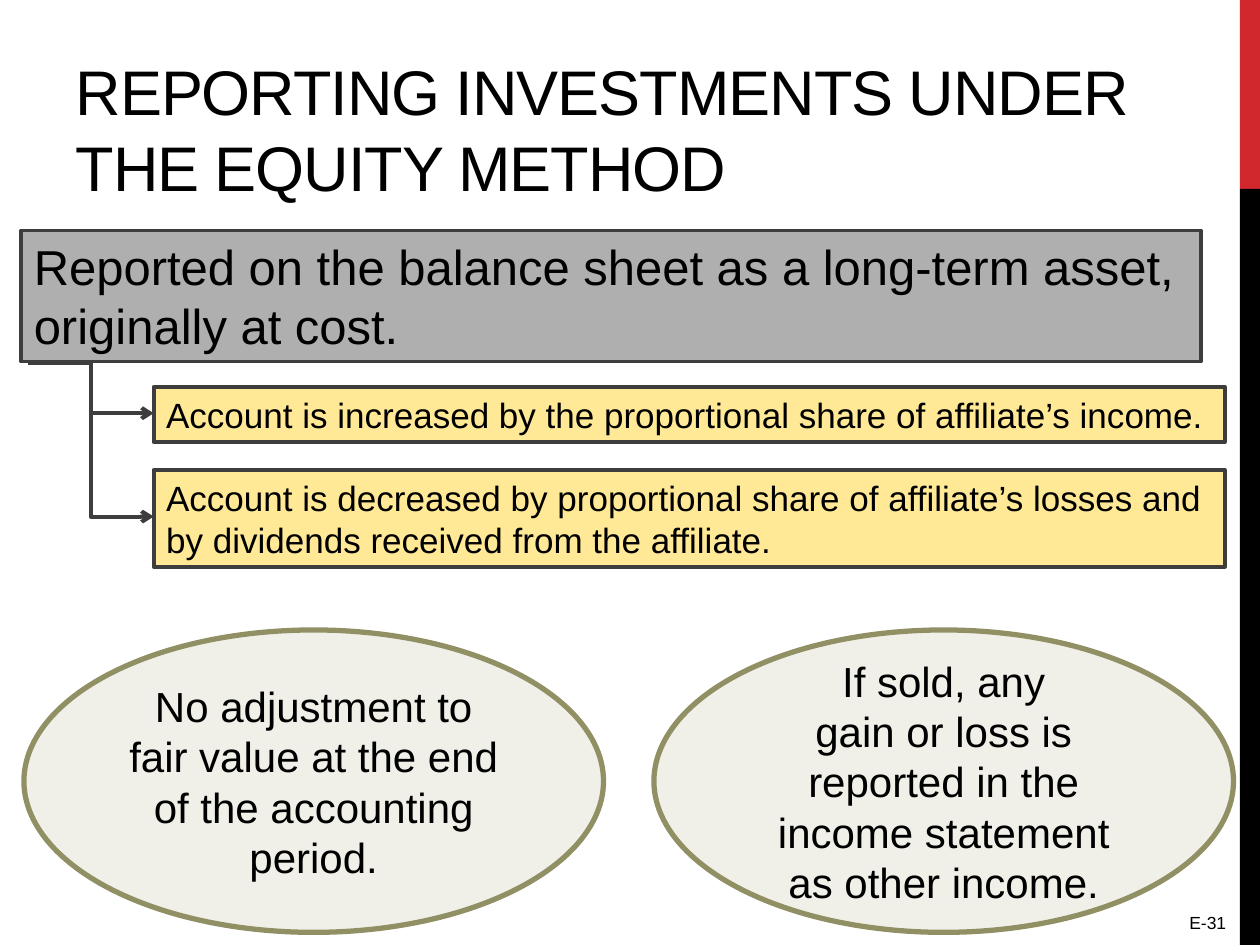
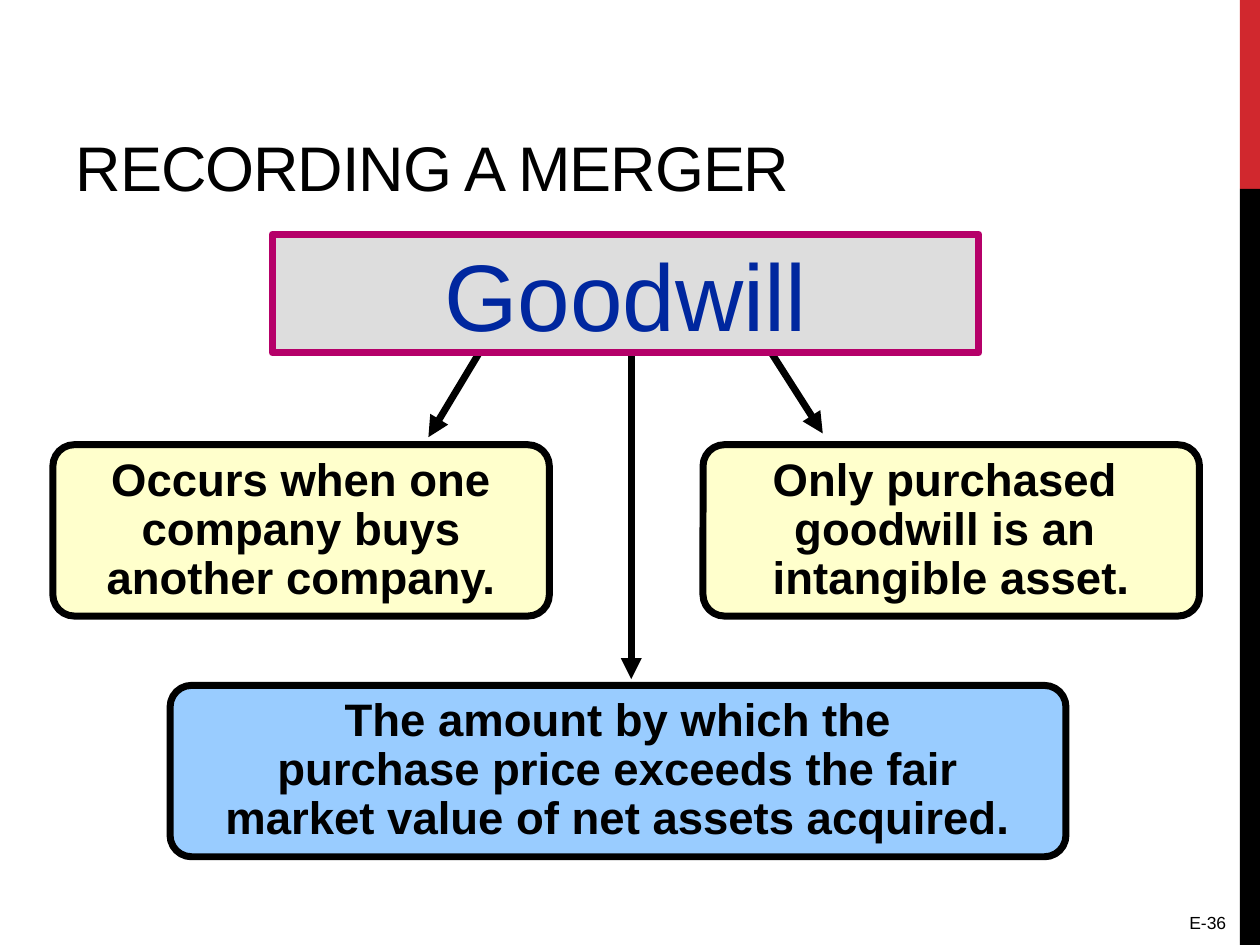
from lxml import etree
from pptx import Presentation
from pptx.dml.color import RGBColor
from pptx.enum.shapes import MSO_CONNECTOR, MSO_SHAPE
from pptx.enum.text import MSO_ANCHOR, MSO_AUTO_SIZE, PP_ALIGN
from pptx.oxml.ns import qn
from pptx.util import Pt

RECTANGLE, ROUNDED, ELLIPSE = MSO_SHAPE.RECTANGLE, MSO_SHAPE.ROUNDED_RECTANGLE, MSO_SHAPE.OVAL
STRAIGHT, ELBOW = MSO_CONNECTOR.STRAIGHT, MSO_CONNECTOR.ELBOW
TOP, MIDDLE, BOTTOM = MSO_ANCHOR.TOP, MSO_ANCHOR.MIDDLE, MSO_ANCHOR.BOTTOM
LEFT, CENTER, RIGHT = PP_ALIGN.LEFT, PP_ALIGN.CENTER, PP_ALIGN.RIGHT
NO_AUTOFIT, GROW = MSO_AUTO_SIZE.NONE, MSO_AUTO_SIZE.SHAPE_TO_FIT_TEXT

PX = 9144  # 100 px to the inch
SLIDE_WIDTH, SLIDE_HEIGHT = 1000, 750
TITLE_ONLY = 5
FONT = "Arial"
BLACK, RED, CHARCOAL = "000000", "D1282E", "3D3D3D"

# Text styles: frame, paragraph and font values
TITLE_STYLE = {
    "frame": {"auto_size": NO_AUTOFIT, "word_wrap": True, "vertical_anchor": BOTTOM},
    "paragraph": {"alignment": LEFT},
    "font": {"size": Pt(36)},
}
PAGE_STYLE = {
    "frame": {"word_wrap": True, "vertical_anchor": TOP},
    "paragraph": {"alignment": RIGHT},
    "font": {"size": Pt(10)},
}
STATEMENT_FRAME = {"word_wrap": False, "auto_size": GROW, "vertical_anchor": TOP}
HEADING_STYLE = {
    "frame": STATEMENT_FRAME,
    "paragraph": {"alignment": LEFT},
    "font": {"size": Pt(28)},
}
ENTRY_STYLE = {**HEADING_STYLE, "font": {"size": Pt(20)}}
NOTE_STYLE = {
    "frame": {"word_wrap": True, "vertical_anchor": MIDDLE},
    "paragraph": {"alignment": CENTER},
    "font": {"size": Pt(24)},
}
TERM_STYLE = {
    "frame": {"word_wrap": False, "vertical_anchor": MIDDLE},
    "paragraph": {"alignment": CENTER},
    "font": {"size": Pt(54)},
}
FACT_STYLE = {
    "frame": TERM_STYLE["frame"],
    "paragraph": {"alignment": CENTER, "line_spacing": 0.9},
    "font": {"size": Pt(26), "bold": True},
}


def color(hex_value):
    return RGBColor.from_string(hex_value)


def scaled(*lengths):
    return [length * PX for length in lengths]


def set_values(target, values):
    for name, value in values.items():
        setattr(target, name, value)


def write_text(shape, text, style, text_color=BLACK):
    frame = shape.text_frame
    paragraph = frame.paragraphs[0]
    paragraph.text = text
    set_values(frame, style["frame"])
    set_values(paragraph, style["paragraph"])
    for run in paragraph.runs:
        set_values(run.font, {"name": FONT, **style["font"]})
        run.font.color.rgb = color(text_color)


def add_box(slide, kind, box, fill, line=None, line_width=0):
    shape = slide.shapes.add_shape(kind, *scaled(*box))
    shape.shadow.inherit = False
    shape.fill.solid()
    shape.fill.fore_color.rgb = color(fill)
    if line:
        shape.line.color.rgb = color(line)
        shape.line.width = Pt(line_width)
    else:
        shape.line.fill.background()
    return shape


def add_arrow(slide, kind, start, end, line, line_width, head):
    arrow = slide.shapes.add_connector(kind, *scaled(*start, *end))
    arrow.line.color.rgb = color(line)
    arrow.line.width = Pt(line_width)
    properties = arrow.element.spPr
    etree.SubElement(properties.find(qn("a:ln")), qn("a:tailEnd"), type=head)
    etree.SubElement(properties, qn("a:effectLst"))


def add_master_bands(presentation, slide):
    """Draw the two side bands and move them to the slide master."""
    left, split = 984, 150
    bands = [(0, split, RED), (split, SLIDE_HEIGHT - split, BLACK)]
    for number, (top, height, fill) in enumerate(bands):
        band = add_box(slide, RECTANGLE, (left, top, SLIDE_WIDTH - left, height), fill)
        band.element.nvSpPr.cNvPr.id = 20 + number
        presentation.slide_master.shapes.element.insert(2 + number, band.element)


def add_title_slide(presentation, title_text, page_text):
    """Start a slide with its title and page label."""
    slide = presentation.slides.add_slide(presentation.slide_layouts[TITLE_ONLY])
    title = slide.shapes.title
    set_values(title, dict(zip(("left", "top", "width", "height"), scaled(50, 17, 917, 150))))
    write_text(title, title_text, TITLE_STYLE)
    for run in title.text_frame.paragraphs[0].runs:
        run.font.element.set("spc", "-60") if hasattr(run.font, "element") else \
            run._r.get_or_add_rPr().set("spc", "-60")
    page = slide.shapes.add_textbox(*scaled(800, 719, 183, 31))
    write_text(page, page_text, PAGE_STYLE)
    return slide


def add_account_tree(slide, box):
    """Heading box with the entries that branch from it."""
    left, top, width, height = box
    heading = add_box(slide, RECTANGLE, (left, top, width, height), "AFAFAF", CHARCOAL, 2.25)
    write_text(
        heading,
        "Reported on the balance sheet as a long-term asset,\noriginally at cost.",
        HEADING_STYLE,
    )
    entries = [
        (124, 44, "Account is increased by the proportional share of affiliate’s income."),
        (190, 77, "Account is decreased by proportional share of affiliate’s losses and\n"
                  "by dividends received from the affiliate."),
    ]
    entry_left = left + 105
    branch_start = (left + 5, top + height + 1)
    for offset, entry_height, text in entries:
        entry_top = top + offset
        entry_box = (entry_left, entry_top, 850, entry_height)
        entry = add_box(slide, RECTANGLE, entry_box, "FFE996", CHARCOAL, 2.25)
        write_text(entry, text, ENTRY_STYLE)
        branch_end = (entry_left, entry_top + entry_height // 2 - 1)
        add_arrow(slide, ELBOW, branch_start, branch_end, CHARCOAL, 2.25, "arrow")


def add_notes_row(slide, box):
    """Two ellipses side by side."""
    left, top, width, height = box
    gap = 40
    note_width = (width - gap) // 2
    notes = [
        "No adjustment to fair value at the end of the accounting period.",
        "If sold, any\ngain or loss is reported in the income statement as other income.",
    ]
    for index, text in enumerate(notes):
        note_box = (left + index * (note_width + gap), top, note_width, height)
        note = add_box(slide, ELLIPSE, note_box, "F0F0E9", "919064", 3)
        write_text(note, text, NOTE_STYLE)


def add_goodwill_diagram(slide, box):
    """Goodwill term with arrows to three facts."""
    left, top, width, height = box
    fact_width, fact_height = 394, 136
    fact_top = top + 167
    facts = [
        (left, fact_top, fact_width, "FFFFCC",
         "Occurs when one\ncompany buys\nanother company."),
        (left + width - fact_width, fact_top, fact_width, "FFFFCC",
         "Only purchased \ngoodwill is an \nintangible asset."),
        (left + 93, top + height - fact_height, 711, "99CCFF",
         "The amount by which the\npurchase price exceeds the fair\n"
         "market value of net assets acquired."),
    ]
    for fact_left, row_top, row_width, fill, text in facts:
        fact = add_box(slide, ROUNDED, (fact_left, row_top, row_width, fact_height), fill, BLACK, 4)
        fact.adjustments[0] = 0.125
        write_text(fact, text, FACT_STYLE)

    # Arrows start behind the term box
    arrows = [((345, 83), (298, 161)), ((459, 83), (459, 353)), ((567, 89), (611, 158))]
    for start, end in arrows:
        points = [(left + x, top + y) for x, y in (start, end)]
        add_arrow(slide, STRAIGHT, *points, BLACK, 4, "triangle")

    term = add_box(slide, RECTANGLE, (left + 174, top, 561, 94), "DDDDDD", "B50069", 4)
    write_text(term, "Goodwill", TERM_STYLE, "00279F")


def main():
    presentation = Presentation()
    presentation.slide_width, presentation.slide_height = scaled(SLIDE_WIDTH, SLIDE_HEIGHT)

    equity_slide = add_title_slide(
        presentation, "REPORTING INVESTMENTS UNDER THE EQUITY METHOD", "E-31"
    )
    add_master_bands(presentation, equity_slide)
    add_account_tree(equity_slide, (17, 183, 936, 104))
    add_notes_row(equity_slide, (19, 500, 960, 240))

    merger_slide = add_title_slide(presentation, "RECORDING A MERGER", "E-36")
    add_goodwill_diagram(merger_slide, (42, 186, 910, 494))

    presentation.save("out.pptx")


if __name__ == "__main__":
    main()
